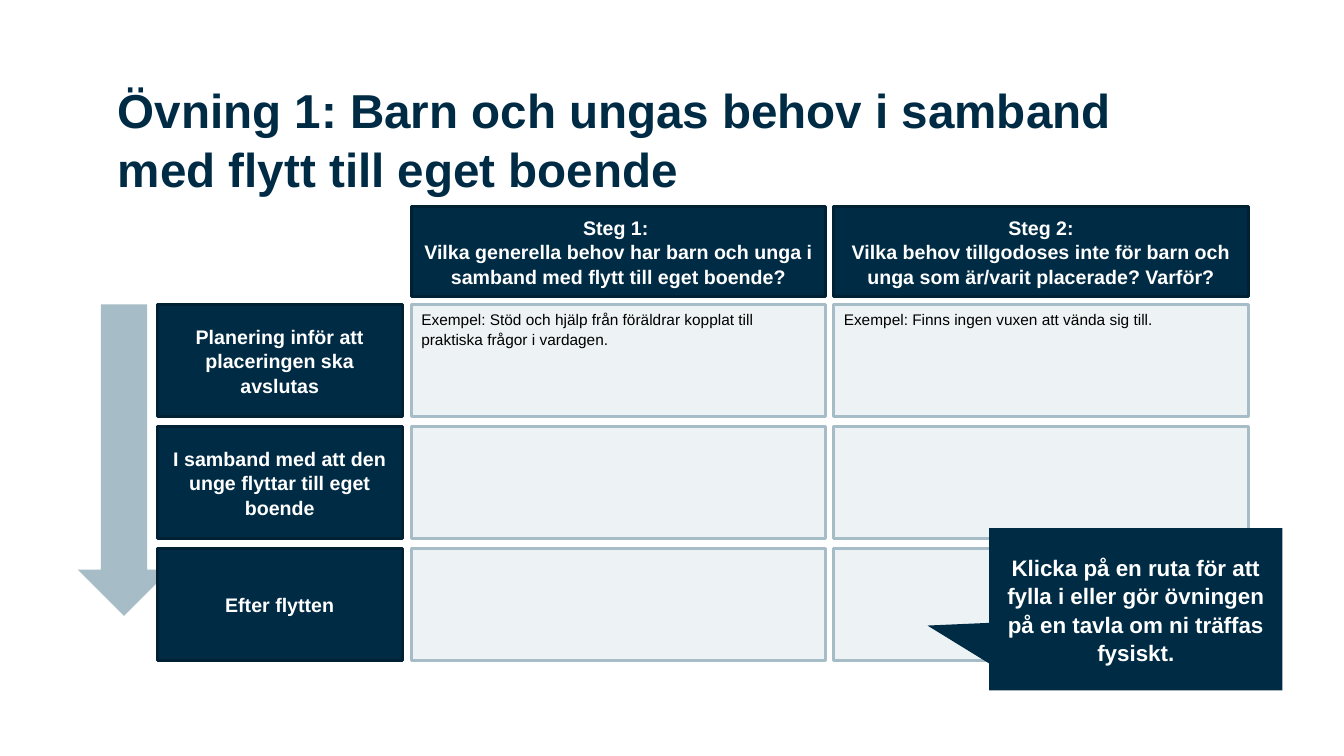
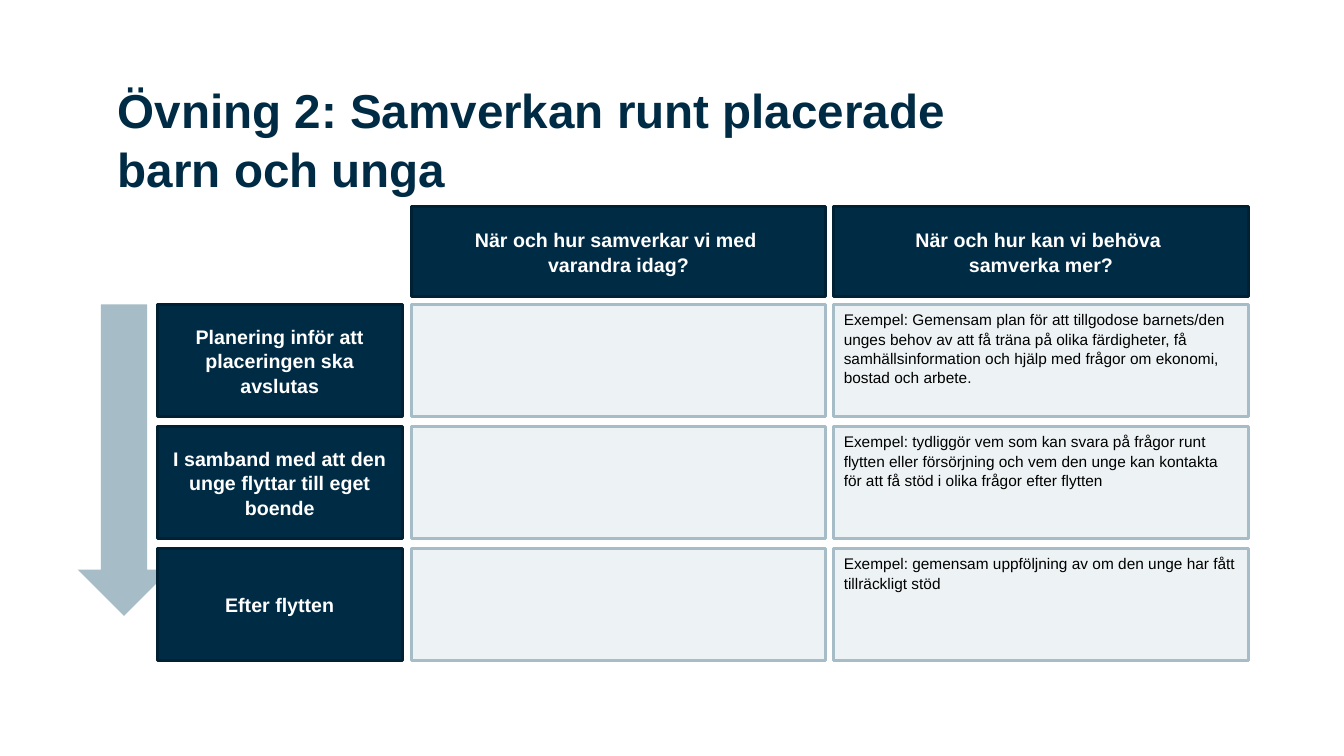
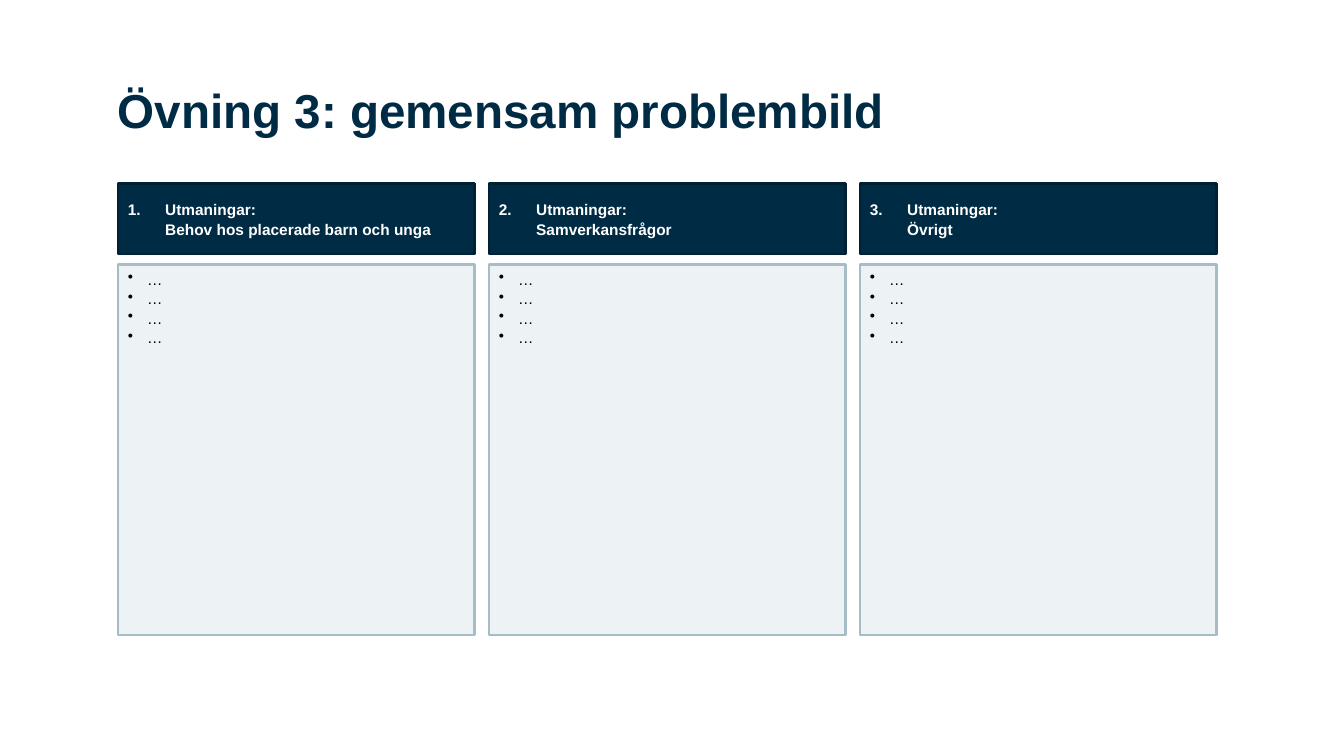
from copy import deepcopy
from dataclasses import dataclass

from lxml import etree
from pptx import Presentation
from pptx.dml.color import RGBColor
from pptx.enum.shapes import MSO_SHAPE
from pptx.enum.text import MSO_ANCHOR, PP_ALIGN
from pptx.oxml.ns import qn
from pptx.util import Pt

RECTANGLE = MSO_SHAPE.RECTANGLE
DOWN_ARROW = MSO_SHAPE.DOWN_ARROW
CALLOUT = MSO_SHAPE.RECTANGULAR_CALLOUT
LEFT, CENTER = PP_ALIGN.LEFT, PP_ALIGN.CENTER
TOP, MIDDLE = MSO_ANCHOR.TOP, MSO_ANCHOR.MIDDLE
EMU_PER_PX = 9144  # 100 px to the inch


@dataclass(frozen=True)
class Theme:
    font: str = "Arial"
    navy: str = "002B45"
    navy_edge: str = "002033"
    mist: str = "A6BCC6"
    pale: str = "EDF2F4"
    white: str = "FFFFFF"
    black: str = "000000"
    title_size: int = 34
    callout_size: int = 16
    heading_size: int = 14
    body_size: int = 11
    edge_width: int = 2
    line_spacing: float = 1.05


def px(length):
    return round(length * EMU_PER_PX)


class Deck:
    def __init__(self, theme):
        self.theme = theme
        self.presentation = Presentation()
        self.presentation.slide_width = px(1333)
        self.presentation.slide_height = px(750)
        self.page = None

    def start_page(self, title):
        blank = self.presentation.slide_layouts[6]
        self.page = self.presentation.slides.add_slide(blank)
        box = self.page.shapes.add_textbox(px(117), px(77), px(1014), px(142))
        frame = box.text_frame
        frame.margin_left = frame.margin_right = 0
        frame.margin_top = frame.margin_bottom = 0
        self.fill_text(box, title, self.theme.title_size, self.theme.navy, bold=True)

    def fill_text(self, shape, text, size, color, bold=False, align=LEFT,
                  anchor=TOP, bullet=None, indent=0):
        """Fill a shape with text; bullet is a (tag, attributes) pair."""
        frame = shape.text_frame
        frame.word_wrap = True
        frame.vertical_anchor = anchor
        frame.text = text
        for para in frame.paragraphs:
            if bullet:
                tag, attributes = bullet
                properties = para._p.get_or_add_pPr()
                properties.set("marL", str(px(indent)))
                properties.set("indent", str(-px(indent)))
                etree.SubElement(properties, qn(tag), attributes)
            para.alignment = align
            para.line_spacing = self.theme.line_spacing
            for span in para.runs:
                span.font.name = self.theme.font
                span.font.size = Pt(size)
                span.font.bold = bold
                span.font.color.rgb = RGBColor.from_string(color)
            # Line breaks need the run's size to keep the line height.
            for line_break in para._p.findall(qn("a:br")):
                line_break.append(deepcopy(para.runs[0]._r.rPr))

    def shape(self, kind, left, top, width, height, fill, edge=None):
        shape = self.page.shapes.add_shape(
            kind, px(left), px(top), px(width), px(height))
        shape.shadow.inherit = False
        shape.fill.solid()
        shape.fill.fore_color.rgb = RGBColor.from_string(fill)
        if edge:
            shape.line.color.rgb = RGBColor.from_string(edge)
            shape.line.width = Pt(self.theme.edge_width)
        else:
            shape.line.fill.background()
        return shape

    def heading(self, left, top, width, height, text):
        theme = self.theme
        box = self.shape(RECTANGLE, left, top, width, height,
                         theme.navy, theme.navy_edge)
        self.fill_text(box, text, theme.heading_size, theme.white, bold=True,
                       align=CENTER, anchor=MIDDLE)

    def numbered_heading(self, left, top, width, height, text, number):
        theme = self.theme
        box = self.shape(RECTANGLE, left, top, width, height,
                         theme.navy, theme.navy_edge)
        numbering = {"type": "arabicPeriod", "startAt": str(number)}
        self.fill_text(box, text, theme.body_size, theme.white, bold=True,
                       anchor=MIDDLE, bullet=("a:buAutoNum", numbering), indent=37)

    def panel(self, left, top, width, height, text="", bulleted=False):
        theme = self.theme
        box = self.shape(RECTANGLE, left, top, width, height,
                         theme.pale, theme.mist)
        if bulleted:
            self.fill_text(box, text, theme.body_size, theme.black,
                           bullet=("a:buChar", {"char": "•"}), indent=19)
        elif text:
            self.fill_text(box, text, theme.body_size, theme.black)

    def arrow(self, left, top, width, height):
        self.shape(DOWN_ARROW, left, top, width, height, self.theme.mist)

    def callout(self, left, top, width, height, tip, text):
        theme = self.theme
        box = self.shape(CALLOUT, left, top, width, height, theme.navy)
        box.adjustments[0], box.adjustments[1] = tip
        self.fill_text(box, text, theme.callout_size, theme.white, bold=True,
                       align=CENTER, anchor=MIDDLE)

    def phase_grid(self, columns):
        """Draw the three phases against columns of (heading, cell texts)."""
        phases = ["Planering inför att placeringen ska avslutas",
                  "I samband med att den unge flyttar till eget boende",
                  "Efter flytten"]
        row_height = 111
        row_tops = [302 + row * (row_height + 10) for row in range(len(phases))]
        self.arrow(77, 302, 92, 309)
        for top, phase in zip(row_tops, phases):
            self.heading(156, top, 243, row_height, phase)
        for column, (heading, cells) in enumerate(columns):
            left, width = 408 + column * 419, 411
            self.heading(left, 205, width, 89, heading)
            for top, text in zip(row_tops, cells):
                self.panel(left, top, width, row_height, text)

    def challenge_columns(self, topics):
        width, gap = 354, 14
        for index, topic in enumerate(topics):
            left = 117 + index * (width + gap)
            self.numbered_heading(left, 182, width, 70, topic, index + 1)
            self.panel(left, 262, width, 368, "\n".join(["…"] * 4), bulleted=True)


def main():
    deck = Deck(Theme())

    deck.start_page("Övning 1: Barn och ungas behov i samband med flytt till eget boende")
    deck.phase_grid([
        ("Steg 1: \vVilka generella behov har barn och unga i samband med "
         "flytt till eget boende?",
         ["Exempel: Stöd och hjälp från föräldrar kopplat till praktiska "
          "frågor i vardagen.", "", ""]),
        ("Steg 2:\vVilka behov tillgodoses inte för barn och unga som "
         "är/varit placerade? Varför?",
         ["Exempel: Finns ingen vuxen att vända sig till.", "", ""]),
    ])
    deck.callout(981, 524, 291, 161, (-0.71, 0.1),
                 "Klicka på en ruta för att fylla i eller gör övningen på en "
                 "tavla om ni träffas fysiskt.")

    deck.start_page("Övning 2: Samverkan runt placerade \vbarn och unga")
    deck.phase_grid([
        ("När och hur samverkar vi med \vvarandra idag?", ["", "", ""]),
        ("När och hur kan vi behöva \vsamverka mer?",
         ["Exempel: Gemensam plan för att tillgodose barnets/den unges behov "
          "av att få träna på olika färdigheter, få samhällsinformation och "
          "hjälp med frågor om ekonomi, bostad och arbete.",
          "Exempel: tydliggör vem som kan svara på frågor runt flytten eller "
          "försörjning och vem den unge kan kontakta för att få stöd i olika "
          "frågor efter flytten",
          "Exempel: gemensam uppföljning av om den unge har fått tillräckligt "
          "stöd"]),
    ])

    deck.start_page("Övning 3: gemensam problembild")
    deck.challenge_columns([
        "Utmaningar: \vBehov hos placerade barn och unga",
        "Utmaningar:\vSamverkansfrågor",
        "Utmaningar:\vÖvrigt",
    ])

    deck.presentation.save("out.pptx")


if __name__ == "__main__":
    main()
